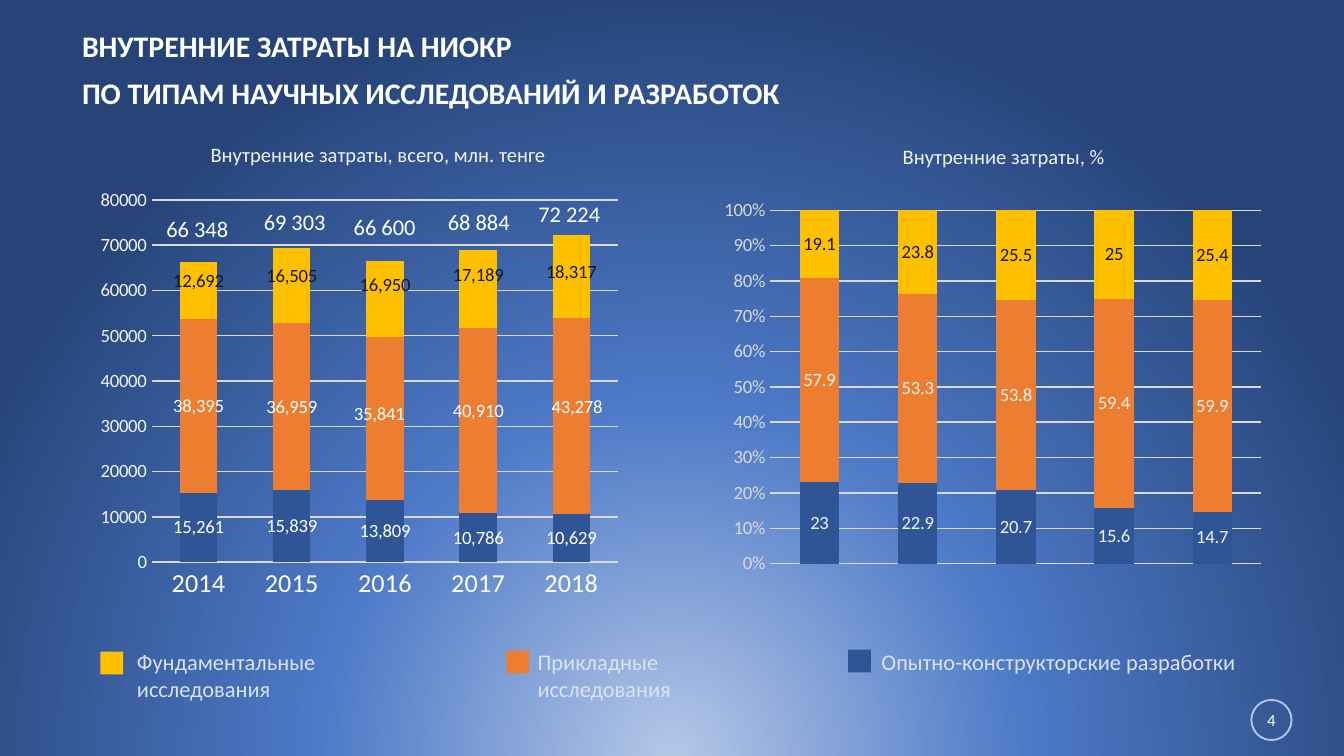
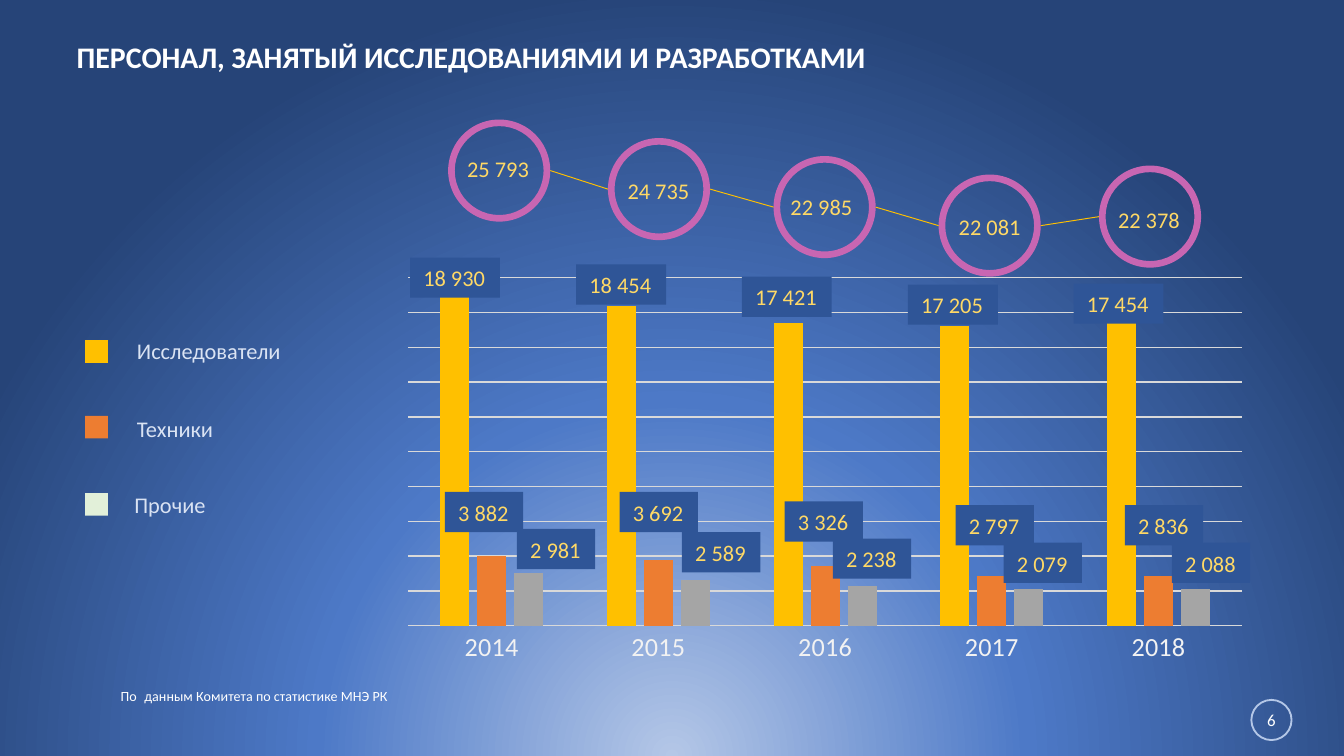
from dataclasses import dataclass
from itertools import pairwise
from typing import NamedTuple

from pptx import Presentation, util as u
from pptx.chart.data import CategoryChartData
from pptx.dml.color import RGBColor
from pptx.enum import chart as charts, shapes, text as texts
from pptx.oxml import parse_xml
from pptx.oxml.ns import nsdecls


@dataclass(frozen=True)
class Theme:
    font: str = "Calibri"
    white: str = "FFFFFF"
    pale: str = "F2F2F2"
    grid: str = "D9D9D9"
    dark: str = "181717"
    legend: str = "DAE3F3"
    number: str = "FFD966"
    blue: str = "2F5597"
    orange: str = "ED7D31"
    yellow: str = "FFC000"
    gray: str = "A5A5A5"
    mint: str = "E2F0D9"
    pink: str = "C866B2"
    badge: str = "B4C7E7"
    background: tuple = ((0, "B4C7E7"), (46, "4D79C7"), (100, "264478"))
    title_size: float = 16
    year_size: float = 14
    label_size: float = 12
    caption_size: float = 11
    chart_size: float = 10
    badge_size: float = 9
    note_size: float = 7.5
    gap_size: float = 18


THEME = Theme()
YEARS = ["2014", "2015", "2016", "2017", "2018"]
LINE_HEIGHT = 0.76


class Box(NamedTuple):
    """Left, top, width and height in centimetres."""
    left: float
    top: float
    width: float
    height: float = LINE_HEIGHT

    def lengths(self) -> list:
        return [u.Cm(value) for value in self]


class LegendItem(NamedTuple):
    label: str
    color: str
    swatch: tuple
    box: Box
    right: float = 0


class Series(NamedTuple):
    values: list
    color: str
    label_color: str | None = None
    label_shifts: dict = {}


class TagRow(NamedTuple):
    values: list
    width: float
    corners: list


class Circle(NamedTuple):
    value: int
    left: float
    top: float
    text_left: float
    text_top: float


def rgb(color: str) -> RGBColor:
    return RGBColor.from_string(color)


def spaced(value: int) -> str:
    return f"{value:,}".replace(",", " ")


def style_font(font, size: float, color: str, bold=False, italic=False) -> None:
    font.name, font.size = THEME.font, u.Pt(size)
    font.bold, font.italic = bold, italic
    font.color.rgb = rgb(color)


def add_span(para, content: str, **style) -> None:
    span = para.add_run()
    span.text = content
    style_font(span.font, **style)


def write(shape, content: str, *, size=THEME.label_size, color=THEME.white, bold=False,
          align=texts.PP_ALIGN.LEFT, anchor=texts.MSO_ANCHOR.TOP, spacing=None,
          left=0.25, right=0, vertical=0.13) -> None:
    frame = shape.text_frame
    frame.word_wrap, frame.auto_size = True, texts.MSO_AUTO_SIZE.NONE
    frame.vertical_anchor = anchor
    frame.margin_left, frame.margin_right = u.Cm(left), u.Cm(right)
    frame.margin_top = frame.margin_bottom = u.Cm(vertical)
    for number, line in enumerate(content.split("\n")):
        para = frame.add_paragraph() if number else frame.paragraphs[0]
        para.alignment = align
        if spacing:
            para.line_spacing = spacing
        add_span(para, line, size=size, color=color, bold=bold)


def add_text(page, box: Box, content: str, **style):
    shape = page.shapes.add_textbox(*box.lengths())
    write(shape, content, **style)
    return shape


def add_figure(page, kind, box: Box, fill: str | None):
    figure = page.shapes.add_shape(kind, *box.lengths())
    figure.shadow.inherit = False
    figure.line.fill.background()
    if fill:
        figure.fill.solid()
        figure.fill.fore_color.rgb = rgb(fill)
    else:
        figure.fill.background()
    return figure


def set_background(master) -> None:
    master.background.fill.solid()
    stops = "".join(f'<a:gs pos="{place * 1000}"><a:srgbClr val="{color}"/></a:gs>'
                    for place, color in THEME.background)
    gradient = parse_xml(
        f'<a:gradFill {nsdecls("a")} rotWithShape="1"><a:gsLst>{stops}</a:gsLst>'
        '<a:path path="circle"><a:fillToRect l="50000" t="130000" r="50000" b="-30000"/>'
        '</a:path></a:gradFill>')
    properties = master.element.xpath("p:cSld/p:bg/p:bgPr")[0]
    properties.replace(properties[0], gradient)


def add_page(deck, title: str, box: Box, number: int, spacing=None):
    """Add a slide with its title and numbered badge."""
    page = deck.slides.add_slide(deck.slide_layouts[5])
    heading = page.shapes.title
    heading.left, heading.top, heading.width, heading.height = box.lengths()
    write(heading, title, size=THEME.title_size, bold=True, spacing=spacing,
          anchor=texts.MSO_ANCHOR.MIDDLE, left=0.19, vertical=0.1)
    badge = add_figure(page, shapes.MSO_SHAPE.OVAL, Box(23.65, 13.23, 0.76), None)
    badge.line.color.rgb = rgb(THEME.badge)
    badge.line.width = u.Pt(1)
    write(badge, str(number), size=THEME.badge_size, left=0,
          align=texts.PP_ALIGN.CENTER, anchor=texts.MSO_ANCHOR.MIDDLE)
    return page


def add_legend(page, items: list[LegendItem]) -> None:
    for item in items:
        add_figure(page, shapes.MSO_SHAPE.RECTANGLE, Box(*item.swatch, 0.43, 0.43), item.color)
        add_text(page, item.box, item.label, color=THEME.legend, right=item.right)


def layout_xml(x: float, y: float, extra: str = "") -> str:
    return (f'<c:layout {nsdecls("c")}><c:manualLayout>{extra}'
            f'<c:x val="{x}"/><c:y val="{y}"/></c:manualLayout></c:layout>')


def place_plot(chart, x: float, y: float, width: float, height: float) -> None:
    area = chart.element.xpath("c:chart/c:plotArea")[0]
    for old in area.xpath("c:layout"):
        area.remove(old)
    layout = parse_xml(layout_xml(x, y, '<c:layoutTarget val="inner"/>'
                                  '<c:xMode val="edge"/><c:yMode val="edge"/>'))
    for name, value in (("w", width), ("h", height)):
        layout[0].append(parse_xml(f'<c:{name} {nsdecls("c")} val="{value}"/>'))
    area.insert(0, layout)


def label_series(chart, index: int, series: Series, number_format: str) -> None:
    drawn = chart.plots[0].series[index]
    labels = drawn.data_labels
    labels.show_value = True
    labels.number_format, labels.number_format_is_linked = number_format, False
    style_font(labels.font, THEME.chart_size, series.label_color)
    for point, shift in series.label_shifts.items():
        style_font(drawn.points[point].data_label.font, THEME.chart_size, series.label_color)
        mark = chart.element.xpath(f"//c:ser[c:idx/@val='{index}']//c:dLbl/c:idx[@val='{point}']")[0]
        mark.addnext(parse_xml(f'<c:numFmt {nsdecls("c")} formatCode="{number_format}" sourceLinked="0"/>'))
        mark.addnext(parse_xml(layout_xml(*shift)))


def style_ticks(axis, color: str, number_format: str) -> None:
    ticks = axis.tick_labels
    style_font(ticks.font, THEME.chart_size, color)
    ticks.number_format, ticks.number_format_is_linked = number_format, False


def add_columns(page, kind, box: Box, categories: list, rows: list[Series], *,
                gap=150, overlap=100, label_format="General", top=None, step=None):
    data = CategoryChartData()
    data.categories = categories
    for number, series in enumerate(rows, 1):
        data.add_series(f"Series {number}", series.values)
    chart = page.shapes.add_chart(kind, *box.lengths(), data).chart
    chart.has_legend = chart.has_title = False
    style_font(chart.font, THEME.chart_size, "000000")
    plot = chart.plots[0]
    plot.gap_width, plot.overlap, plot.vary_by_categories = gap, overlap, False
    for index, series in enumerate(rows):
        fill = plot.series[index].format.fill
        fill.solid()
        fill.fore_color.rgb = rgb(series.color)
        if series.label_color:
            label_series(chart, index, series, label_format)
    years, scale = chart.category_axis, chart.value_axis
    for axis in (years, scale):
        axis.major_tick_mark = axis.minor_tick_mark = charts.XL_TICK_MARK.NONE
    scale.has_major_gridlines = True
    scale.minimum_scale, scale.maximum_scale, scale.major_unit = 0, top, step
    scale.format.line.fill.background()
    for line in (years.format.line, scale.major_gridlines.format.line):
        line.color.rgb = rgb(THEME.grid)
        line.width = u.Pt(0.75)
    return chart


def build_costs(deck) -> None:
    page = add_page(deck, "ВНУТРЕННИЕ ЗАТРАТЫ НА НИОКР\nПО ТИПАМ НАУЧНЫХ ИССЛЕДОВАНИЙ И РАЗРАБОТОК",
                    Box(1.36, 0.25, 13.77, 1.9), 4, spacing=1.3)
    totals = add_columns(
        page, charts.XL_CHART_TYPE.COLUMN_STACKED, Box(1.37, 3.58, 10.74, 8.59), YEARS,
        [Series([15261, 15839, 13809, 10786, 10629], THEME.blue, THEME.white),
         Series([38395, 36959, 35841, 40910, 43278], THEME.orange, THEME.white,
                {2: (-0.01, -0.01), 3: (0, -0.02), 4: (0.01, -0.02)}),
         Series([12692, 16505, 16950, 17189, 18317], THEME.yellow, THEME.dark,
                {0: (0, -0.02), 1: (0, -0.02), 2: (0, -0.03), 3: (0, -0.03), 4: (0, -0.01)})],
        label_format="#,##0", top=80000, step=10000)
    place_plot(totals, 0.14, 0.02, 0.82, 0.8)
    style_font(totals.category_axis.tick_labels.font, THEME.year_size, THEME.white)
    style_ticks(totals.value_axis, THEME.pale, "0")

    shares = add_columns(
        page, charts.XL_CHART_TYPE.COLUMN_STACKED_100, Box(13.48, 3.63, 10.57, 7.37), list("12345"),
        [Series([23, 22.9, 20.7, 15.6, 14.7], THEME.blue, THEME.pale),
         Series([57.9, 53.3, 53.8, 59.4, 59.9], THEME.orange, THEME.pale),
         Series([19.1, 23.8, 25.5, 25, 25.4], THEME.yellow, THEME.dark)])
    shares.category_axis.visible = False
    style_ticks(shares.value_axis, THEME.grid, "0%")

    for caption, box in (("Внутренние затраты, всего, млн. тенге", Box(3.73, 2.56, 6.91, 0.74)),
                         ("Внутренние затраты, %", Box(16.81, 2.59, 4.37, 0.74))):
        add_text(page, box, caption, size=THEME.caption_size, color=THEME.pale)
    for total, left, top in ((66348, 2.88, 3.94), (69303, 4.72, 3.81), (66600, 6.42, 3.9),
                             (68884, 8.2, 3.81), (72224, 9.91, 3.66)):
        add_text(page, Box(left, top, 1.7), spaced(total), left=0, align=texts.PP_ALIGN.CENTER)
    add_legend(page, [
        LegendItem("Фундаментальные исследования", THEME.yellow, (1.9, 12.32), Box(2.34, 12.13, 6.48), 1.5),
        LegendItem("Прикладные исследования", THEME.orange, (9.57, 12.3), Box(9.91, 12.13, 5.38), 1.5),
        LegendItem("Опытно-конструкторские разработки", THEME.blue, (16.03, 12.28), Box(16.41, 12.13, 7.19))])


def add_circles(page, circles: list[Circle], size: float = 1.93) -> None:
    """Draw the ringed totals and the lines that link them."""
    for circle in circles:
        ring = add_figure(page, shapes.MSO_SHAPE.DONUT, Box(circle.left, circle.top, size, size), THEME.pink)
        ring.adjustments[0] = 0.065
        add_text(page, Box(circle.text_left, circle.text_top, 1.7), spaced(circle.value), color=THEME.number)
    for start, end in pairwise(circles):
        ends = (start.left + size, start.top + size / 2, end.left, end.top + size / 2)
        link = page.shapes.add_connector(shapes.MSO_CONNECTOR.STRAIGHT, *map(u.Cm, ends))
        link.line.color.rgb = rgb(THEME.yellow)
        link.line.width = u.Pt(0.5)
        link.element.spPr.append(parse_xml(f'<a:effectLst {nsdecls("a")}/>'))


def build_staff(deck) -> None:
    page = add_page(deck, "ПЕРСОНАЛ, ЗАНЯТЫЙ ИССЛЕДОВАНИЯМИ И РАЗРАБОТКАМИ",
                    Box(1.26, 0.63, 15.49, 0.89), 6)
    add_legend(page, [
        LegendItem("Исследователи", THEME.yellow, (1.61, 6.43), Box(2.34, 6.25, 3.25)),
        LegendItem("Техники", THEME.orange, (1.61, 7.86), Box(2.34, 7.72, 1.98)),
        LegendItem("Прочие", THEME.mint, (1.61, 9.32), Box(2.29, 9.16, 1.85))])
    tag_rows = [
        TagRow([18930, 18454, 17421, 17205, 17454], 1.7,
               [(7.75, 4.87), (10.89, 5), (14.02, 5.23), (17.16, 5.38), (20.29, 5.36)]),
        TagRow([3882, 3692, 3326, 2797, 2836], 1.48,
               [(8.41, 9.3), (11.71, 9.3), (14.83, 9.48), (18.06, 9.55), (21.26, 9.55)]),
        TagRow([2981, 2589, 2238, 2079, 2088], 1.48,
               [(9.77, 10), (12.89, 10.06), (15.74, 10.18), (18.97, 10.26), (22.15, 10.26)])]
    largest = max(tag_rows[0].values)
    colors = (THEME.yellow, THEME.orange, THEME.gray)
    staff = add_columns(page, charts.XL_CHART_TYPE.COLUMN_CLUSTERED, Box(7.39, 5.1, 16.41, 7.59), YEARS,
                        [Series([round(100 * value / largest) for value in row.values], color)
                         for row, color in zip(tag_rows, colors)],
                        gap=219, overlap=-27, top=105.6, step=10.56)
    staff.value_axis.visible = False
    style_font(staff.category_axis.tick_labels.font, THEME.year_size, THEME.pale)
    add_circles(page, [Circle(25793, 8.47, 2.26, 8.58, 2.8), Circle(24735, 11.49, 2.61, 11.61, 3.22),
                       Circle(22985, 14.62, 2.95, 14.69, 3.53), Circle(22081, 17.74, 3.3, 17.87, 3.9),
                       Circle(22378, 20.77, 3.13, 20.88, 3.76)])
    for row in tag_rows:
        for value, corner in zip(row.values, row.corners):
            tag = add_figure(page, shapes.MSO_SHAPE.RECTANGLE, Box(*corner, row.width), THEME.blue)
            write(tag, spaced(value), color=THEME.number)
    note = add_text(page, Box(2.03, 12.62, 5.59), "По", size=THEME.note_size, vertical=0)
    para = note.text_frame.paragraphs[0]
    add_span(para, " ", size=THEME.gap_size, color=THEME.grid, italic=True)
    add_span(para, "данным Комитета по статистике МНЭ РК", size=THEME.note_size, color=THEME.white)


def main() -> None:
    deck = Presentation()
    deck.slide_width, deck.slide_height = u.Cm(25.4), u.Cm(14.29)
    set_background(deck.slide_master)
    build_costs(deck)
    build_staff(deck)
    deck.save("out.pptx")


if __name__ == "__main__":
    main()
